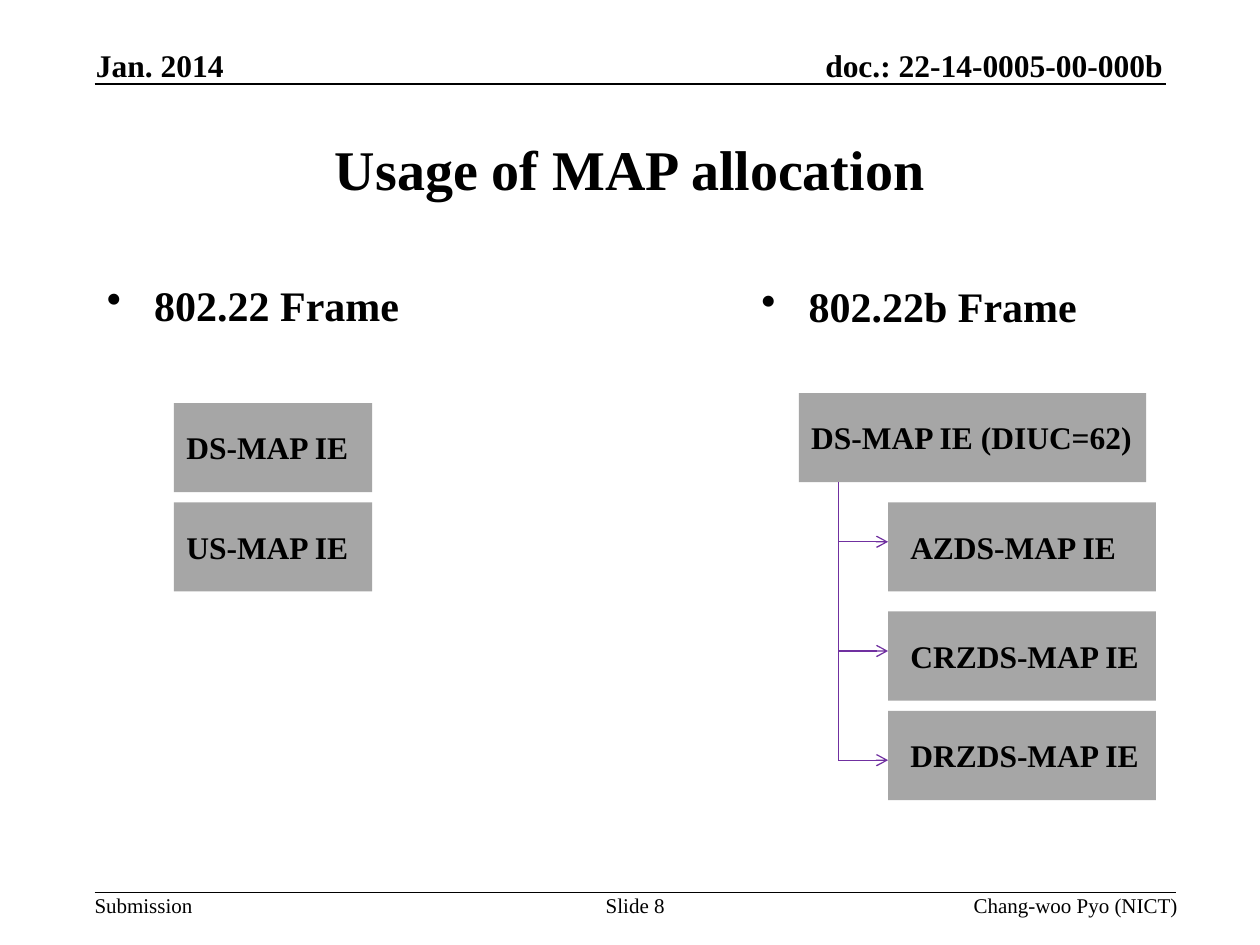
from dataclasses import dataclass

import lxml.etree
import pptx
import pptx.dml.color
import pptx.enum.shapes
import pptx.enum.text
import pptx.oxml.ns
import pptx.util

Pt = pptx.util.Pt
Align = pptx.enum.text.PP_ALIGN
Anchor = pptx.enum.text.MSO_ANCHOR
qn = pptx.oxml.ns.qn

COLOURS = {"text": "000000", "box": "A6A6A6", "arrow": "7030A0"}
FONT = "Times New Roman"
BOX_HEIGHT = 51
LABEL_HEIGHT = 29


@dataclass
class Caption:
    text: str
    left: float
    top: float
    width: float
    height: float
    size: float
    bold: bool = False
    align: Align = Align.LEFT
    anchor: Anchor = Anchor.TOP
    margins: tuple = (0, 0)  # horizontal, vertical
    wrap: bool = False
    bullet: bool = False


@dataclass
class MapBox:
    text: str
    left: float
    top: float
    width: float
    label_width: float
    label_indent: float = 0


def colour(name: str) -> pptx.dml.color.RGBColor:
    return pptx.dml.color.RGBColor.from_string(COLOURS[name])


def draw_caption(slide, caption: Caption) -> None:
    box = slide.shapes.add_textbox(Pt(caption.left), Pt(caption.top),
                                   Pt(caption.width), Pt(caption.height))
    frame = box.text_frame
    frame.word_wrap = caption.wrap
    frame.vertical_anchor = caption.anchor
    if not caption.wrap:
        frame.auto_size = pptx.enum.text.MSO_AUTO_SIZE.SHAPE_TO_FIT_TEXT
    across, down = caption.margins
    frame.margin_left = frame.margin_right = Pt(across)
    frame.margin_top = frame.margin_bottom = Pt(down)
    frame.text = caption.text
    paragraph = frame.paragraphs[0]
    paragraph.alignment = caption.align
    if caption.bullet:
        properties = paragraph._p.get_or_add_pPr()
        properties.set("marL", str(Pt(27)))
        properties.set("indent", str(Pt(-27)))
        lxml.etree.SubElement(properties, qn("a:buChar")).set("char", "•")
    font = paragraph.runs[0].font
    font.name, font.size, font.bold = FONT, Pt(caption.size), caption.bold
    font.color.rgb = colour("text")


def draw_map_box(slide, item: MapBox) -> None:
    box = slide.shapes.add_shape(
        pptx.enum.shapes.MSO_SHAPE.RECTANGLE,
        Pt(item.left), Pt(item.top), Pt(item.width), Pt(BOX_HEIGHT))
    box.shadow.inherit = False
    box.fill.solid()
    box.fill.fore_color.rgb = colour("box")
    box.line.fill.background()
    draw_caption(slide, Caption(
        item.text, item.left + item.label_indent,
        item.top + (BOX_HEIGHT - LABEL_HEIGHT) / 2,
        item.label_width, LABEL_HEIGHT, 18, bold=True, margins=(7.2, 3.6)))


def draw_line(slide, start: tuple, end: tuple, width: float,
              line_colour: str, arrow: bool = False) -> None:
    connector = slide.shapes.add_connector(
        pptx.enum.shapes.MSO_CONNECTOR.STRAIGHT,
        Pt(start[0]), Pt(start[1]), Pt(end[0]), Pt(end[1]))
    connector.line.width = Pt(width)
    connector.line.color.rgb = colour(line_colour)
    if arrow:
        outline = connector.line._get_or_add_ln()
        lxml.etree.SubElement(outline, qn("a:tailEnd")).set("type", "arrow")
    lxml.etree.SubElement(connector._element.spPr, qn("a:effectLst"))


def main() -> None:
    deck = pptx.Presentation()
    deck.slide_width, deck.slide_height = Pt(720), Pt(540)
    slide = deck.slides.add_slide(deck.slide_layouts[6])

    # Header and footer rules
    draw_line(slide, (54, 48), (666, 48), 1, "text")
    draw_line(slide, (54, 510), (672, 510), 1, "text")

    # Header, footer, title and column headings
    heading = {"size": 24, "bold": True, "margins": (7.2, 3.6),
               "wrap": True, "bullet": True}
    header = {"size": 18, "bold": True, "anchor": Anchor.BOTTOM}
    captions = [
        Caption("Jan. 2014", 54.8, 26.6, 75.6, 21.6, **header),
        Caption("doc.: 22-14-0005-00-000b", 433.4, 26.6, 231.2, 21.6,
                align=Align.RIGHT, **header),
        Caption("Submission", 54, 510, 56, 14.4, 12),
        Caption("Slide 8", 342, 510, 42, 14.4, 12, align=Align.CENTER),
        Caption("Chang-woo Pyo (NICT)", 555, 510, 118, 14.4, 12,
                align=Align.RIGHT),
        Caption("Usage of MAP allocation", 54, 54, 612, 84, 32, bold=True,
                align=Align.CENTER, anchor=Anchor.MIDDLE,
                margins=(7.2, 3.6), wrap=True),
        Caption("802.22 Frame", 54, 156, 238, 324, **heading),
        Caption("802.22b Frame", 428, 157, 227, 324, **heading),
    ]
    for caption in captions:
        draw_caption(slide, caption)

    # MAP information elements of both frames
    child_left = 507.5
    child_boxes = [
        MapBox(text, child_left, top, 153, label_width, 5.6)
        for text, top, label_width in (("AZDS-MAP IE", 287, 133),
                                       ("CRZDS-MAP IE", 349.4, 146),
                                       ("DRZDS-MAP IE", 406.2, 146))]
    parent = MapBox("DS-MAP IE (DIUC=62)", 456.5, 224.6, 198.5, 199)
    frame_boxes = [MapBox("DS-MAP IE", 99.4, 230.3, 113.3, 108),
                   MapBox("US-MAP IE", 99.4, 287, 113.3, 108)]
    for item in [*frame_boxes, parent, *child_boxes]:
        draw_map_box(slide, item)

    # Trunk and evenly spaced branches to the zone MAPs
    trunk_left, first_branch, branch_step = 479, 309.6, 62.4
    branches = [first_branch + i * branch_step
                for i in range(len(child_boxes))]
    draw_line(slide, (trunk_left, parent.top + BOX_HEIGHT),
              (trunk_left, branches[-1]), 0.75, "arrow")
    for y in branches:
        draw_line(slide, (trunk_left, y), (child_left, y), 0.75, "arrow",
                  arrow=True)

    deck.save("out.pptx")


if __name__ == "__main__":
    main()
